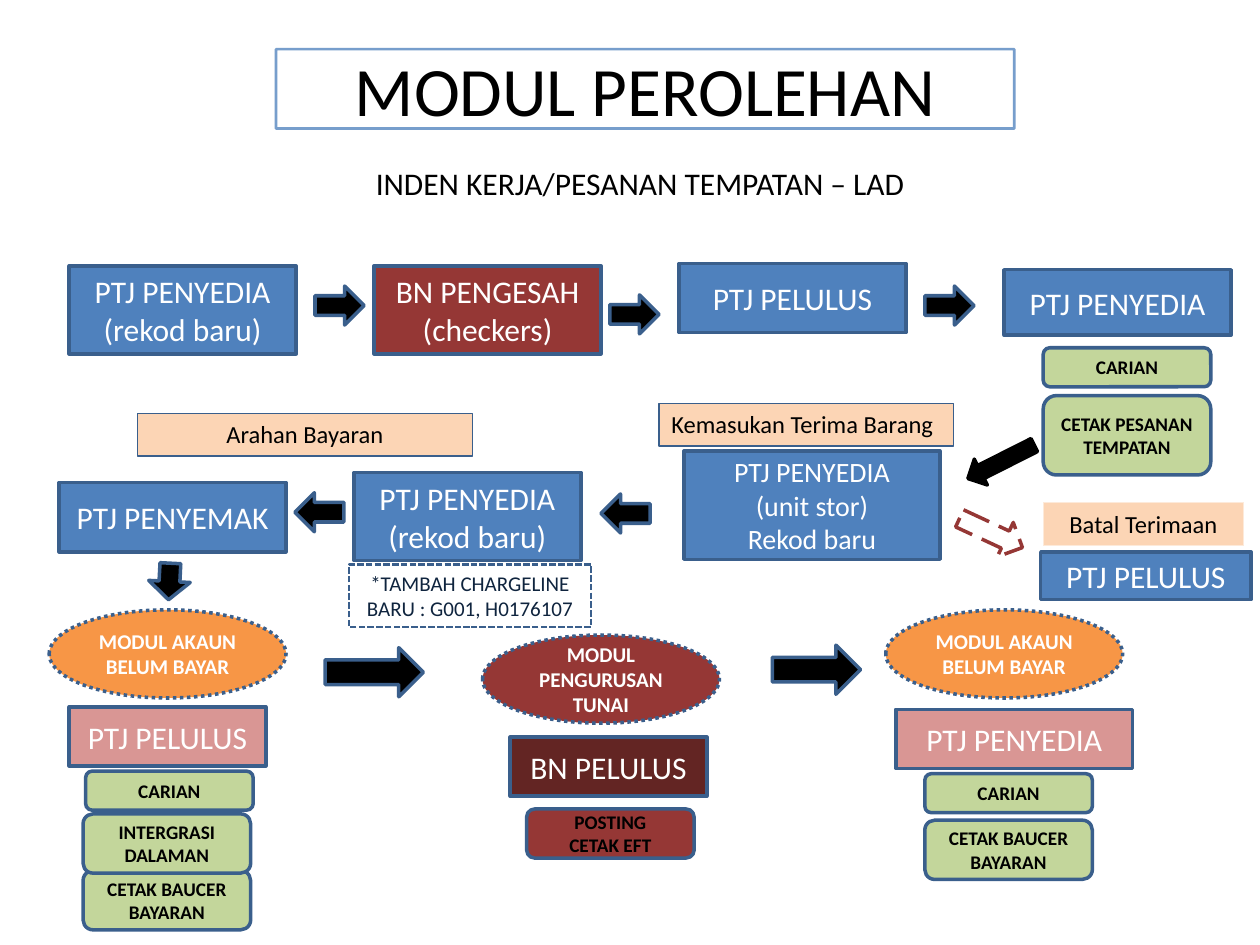
"""Build the MODUL PEROLEHAN process flow slide."""
import pptx
import pptx.dml.color
import pptx.enum.dml
import pptx.enum.shapes
import pptx.enum.text
import pptx.oxml
import pptx.oxml.ns
import pptx.util

Inches = pptx.util.Inches
Pt = pptx.util.Pt
SHAPE = pptx.enum.shapes.MSO_SHAPE
DASH = pptx.enum.dml.MSO_LINE
ANCHOR = pptx.enum.text.MSO_ANCHOR
CENTER = pptx.enum.text.PP_ALIGN.CENTER
LEFT = pptx.enum.text.PP_ALIGN.LEFT
COLORS = {
    "black": "000000", "white": "FFFFFF", "navy": "0F243E", "outline": "3A5F8C",
    "blue": "4F81BD", "red": "953735", "maroon": "632523", "pink": "D99694",
    "orange": "F79646", "green": "C3D69B", "peach": "FCD5B5", "cream": "FDEADA",
}


def add_shape(kind, box, fill, line="outline", width=2, dash=None):
    shape = slide.shapes.add_shape(kind, *[Inches(value) for value in box])
    shape.shadow.inherit = False
    if fill:
        shape.fill.solid()
        shape.fill.fore_color.rgb = pptx.dml.color.RGBColor.from_string(COLORS[fill])
    else:
        shape.fill.background()
    shape.line.color.rgb = pptx.dml.color.RGBColor.from_string(COLORS[line])
    shape.line.width = Pt(width)
    if dash:
        shape.line.dash_style = dash
    return shape


def write(shape, text, size, color, bold=False, anchor=ANCHOR.MIDDLE, alignment=CENTER):
    frame = shape.text_frame
    frame.word_wrap = True
    frame.vertical_anchor = anchor
    frame.text = text
    for paragraph in frame.paragraphs:
        paragraph.alignment = alignment
        paragraph.font.name = "Calibri"
        paragraph.font.size = Pt(size)
        paragraph.font.bold = bold
        paragraph.font.color.rgb = pptx.dml.color.RGBColor.from_string(COLORS[color])


presentation = pptx.Presentation()
presentation.slide_width = Inches(10)
presentation.slide_height = Inches(7.5)
slide = presentation.slides.add_slide(presentation.slide_layouts[0])

subtitle = slide.placeholders[1].element
subtitle.getparent().remove(subtitle)
title = slide.shapes.title
title.left, title.top = Inches(2.19), Inches(0.39)
title.width, title.height = Inches(5.86), Inches(0.63)
title.line.color.rgb = pptx.dml.color.RGBColor.from_string(COLORS["blue"])
title.line.width = Pt(1.5)
line_color = title.element.spPr.find(".//" + pptx.oxml.ns.qn("a:srgbClr"))
line_color.append(pptx.oxml.parse_xml(
    f'<a:alpha {pptx.oxml.ns.nsdecls("a")} val="76000"/>'))
write(title, "MODUL PEROLEHAN", 39.6, "black")

heading = slide.shapes.add_textbox(Inches(2.19), Inches(1.25), Inches(5.78), Inches(0.4))
write(heading, "INDEN KERJA/PESANAN TEMPATAN – LAD", 18, "black", anchor=ANCHOR.TOP)

stage_labels = [
    ((5.23, 3.2, 2.34, 0.34), "Kemasukan Terima Barang", "outline", LEFT),
    ((1.09, 3.28, 2.66, 0.34), "Arahan Bayaran", "outline", CENTER),
    ((8.28, 3.99, 1.59, 0.34), "Batal Terimaan", "cream", CENTER),
]
for box, text, line, alignment in stage_labels:
    label = add_shape(SHAPE.RECTANGLE, box, "peach", line, 0.75)
    write(label, text, 14, "black", anchor=ANCHOR.TOP, alignment=alignment)

roles = [
    ((0.55, 2.11, 1.8, 0.7), "PTJ PENYEDIA\n(rekod baru)", "blue", 18),
    ((2.97, 2.11, 1.8, 0.7), "BN PENGESAH\n(checkers)", "red", 18),
    ((5.39, 2.09, 1.8, 0.55), "PTJ PELULUS", "blue", 18),
    ((7.97, 2.14, 1.8, 0.52), "PTJ PENYEDIA", "blue", 18),
    ((5.43, 3.58, 2.03, 0.86), "PTJ PENYEDIA\n(unit stor)\nRekod baru", "blue", 16),
    ((2.81, 3.75, 1.8, 0.7), "PTJ PENYEDIA\n(rekod baru)", "blue", 18),
    ((0.47, 3.83, 1.8, 0.55), "PTJ PENYEMAK", "blue", 18),
    ((8.26, 4.38, 1.67, 0.38), "PTJ PELULUS", "blue", 18),
    ((0.55, 5.61, 1.56, 0.47), "PTJ PELULUS", "pink", 18),
    ((4.05, 5.85, 1.56, 0.47), "BN PELULUS", "maroon", 18),
    ((7.11, 5.63, 1.88, 0.47), "PTJ PENYEDIA", "pink", 18),
]
for box, text, fill, size in roles:
    write(add_shape(SHAPE.RECTANGLE, box, fill), text, size, "white")

modules = [
    (0.39, 4.84, "MODUL AKAUN BELUM BAYAR", "orange"),
    (3.83, 5.04, "MODUL PENGURUSAN TUNAI", "red"),
    (7.03, 4.84, "MODUL AKAUN BELUM BAYAR", "orange"),
]
for left, top, text, fill in modules:
    module = add_shape(SHAPE.OVAL, (left, top, 1.88, 0.7), fill, dash=DASH.ROUND_DOT)
    write(module, text, 12, "white", bold=True)

actions = [
    (8.28, 2.76, 0.31, "CARIAN", "green"),
    (8.28, 3.14, 0.63, "CETAK PESANAN TEMPATAN", "green"),
    (0.68, 6.12, 0.31, "CARIAN", "green"),
    (0.66, 6.91, 0.47, "CETAK BAUCER BAYARAN", "green"),
    (0.66, 6.46, 0.47, "INTERGRASI DALAMAN", "green"),
    (4.18, 6.42, 0.39, "POSTING\nCETAK EFT", "red"),
    (7.34, 6.14, 0.31, "CARIAN", "green"),
    (7.34, 6.51, 0.47, "CETAK BAUCER BAYARAN", "green"),
]
for left, top, height, text, fill in actions:
    action = add_shape(SHAPE.ROUNDED_RECTANGLE, (left, top, 1.33, height), fill)
    action.text_frame.margin_left = action.text_frame.margin_right = Inches(0.07)
    write(action, text, 11, "black", bold=True)

arrows = [
    ((2.5, 2.27, 0.39, 0.31), 0, "outline"),
    ((4.84, 2.34, 0.39, 0.31), 0, "outline"),
    ((7.34, 2.27, 0.39, 0.31), 0, "outline"),
    ((7.65, 3.55, 0.59, 0.23), 153.2, "black"),
    ((4.77, 3.92, 0.39, 0.31), 180, "outline"),
    ((2.34, 3.91, 0.39, 0.31), 180, "outline"),
    ((1.2, 4.45, 0.29, 0.33), 92.9, "outline"),
    ((2.58, 5.14, 0.78, 0.39), 0, "outline"),
    ((6.13, 5.12, 0.7, 0.39), 0, "outline"),
]
for box, rotation, line in arrows:
    add_shape(SHAPE.RIGHT_ARROW, box, "black", line).rotation = rotation
cancel_arrow = add_shape(
    SHAPE.RIGHT_ARROW, (7.59, 4.08, 0.55, 0.3), None, "red", dash=DASH.LONG_DASH)
cancel_arrow.rotation = 24.9

note = add_shape(
    SHAPE.RECTANGLE, (2.77, 4.48, 1.92, 0.5), None, width=1.25, dash=DASH.SQUARE_DOT)
write(note, "*TAMBAH CHARGELINE BARU : G001, H0176107", 12, "navy", anchor=ANCHOR.TOP)

presentation.save("out.pptx")
